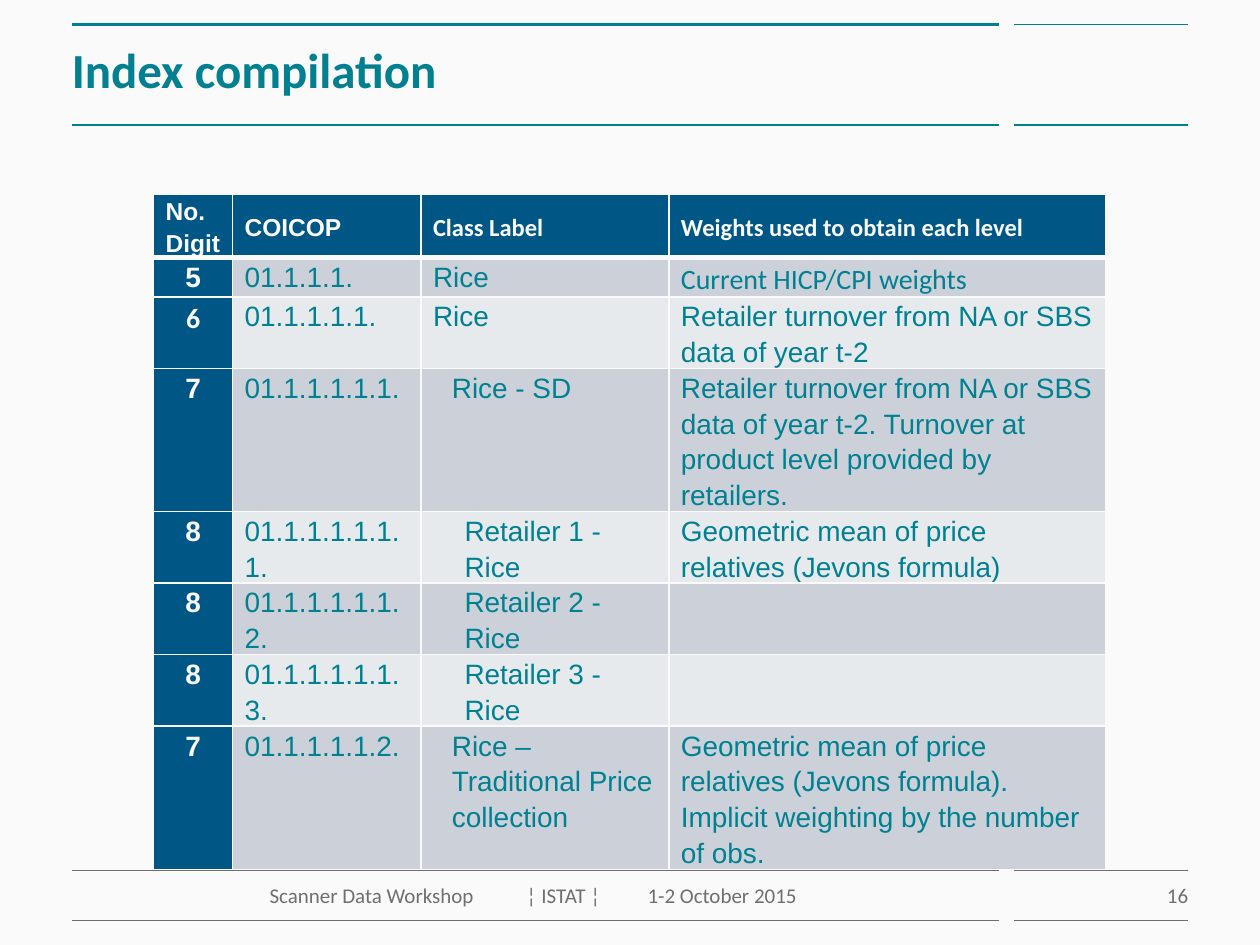
from dataclasses import dataclass

from pptx import Presentation
from pptx import util as u
from pptx.dml import color
from pptx.enum import shapes, text
from pptx.oxml import ns
from lxml import etree

COLUMNS, ROWS = 1000, 750
TEAL, GREY, NAVY, PAPER = "008091", "6F6F6F", "005786", "FAFAFA"
BANDS = ("CCD1D9", "E7EAED")
LEFT, MAIN_END, SIDE_START, RIGHT = 57, 793, 805, 943
HEADER_TOP, HEADER_END, FOOTER_TOP, FOOTER_END = 19.5, 99.3, 691, 730.3

deck = Presentation()
deck.slide_width, deck.slide_height = u.Inches(10), u.Inches(7.5)


@dataclass
class Rule:
    row: float
    ink: str
    main_width: float
    side_width: float


@dataclass
class Style:
    size: float
    ink: str
    font: str = "Calibri"
    bold: bool = False


@dataclass
class Level:
    digits: str
    coicop: str
    label: str
    weights: str
    indent: int = 0
    digit_font: str = "Arial"
    weights_font: str = "Arial"


RULES = [
    Rule(HEADER_TOP, TEAL, 1.5, 0.75),
    Rule(HEADER_END, TEAL, 1.5, 0.75),
    Rule(FOOTER_TOP, GREY, 0.75, 0.25),
    Rule(FOOTER_END, GREY, 0.75, 0.25),
]
HEADINGS = [
    ("No. Digit", "Arial"),
    ("COICOP", "Arial"),
    ("Class Label", "Calibri"),
    ("Weights used to obtain each level", "Calibri"),
]
LEVELS = [
    Level("5", "01.1.1.1.", "Rice", "Current HICP/CPI weights", weights_font="Calibri"),
    Level("6", "01.1.1.1.1.", "Rice",
          "Retailer turnover from NA or SBS data of year t-2", digit_font="Calibri"),
    Level("7", "01.1.1.1.1.1.", "Rice - SD",
          "Retailer turnover from NA or SBS data of year t-2. "
          "Turnover at product level provided by retailers.", 15),
    Level("8", "01.1.1.1.1.1.1.", "Retailer 1 - Rice",
          "Geometric mean of price relatives (Jevons formula)", 25),
    Level("8", "01.1.1.1.1.1.2.", "Retailer 2 - Rice", "", 25),
    Level("8", "01.1.1.1.1.1.3.", "Retailer 3 - Rice", "", 25),
    Level("7", "01.1.1.1.1.2.", "Rice – Traditional Price collection",
          "Geometric mean of price relatives (Jevons formula). "
          "Implicit weighting by the number of obs.", 15),
]
COLUMN_WIDTHS = (62.6, 149.6, 196.8, 347)
ROW_HEIGHTS = (24, 28, 28, 28, 31, 28, 35, 58)


def across(columns: float) -> int:
    return round(deck.slide_width * columns / COLUMNS)


def down(rows: float) -> int:
    return round(deck.slide_height * rows / ROWS)


def paint(target, ink: str) -> None:
    target.solid()
    target.fore_color.rgb = color.RGBColor.from_string(ink)


def write(frame, words: str, style: Style, align=text.PP_ALIGN.LEFT):
    frame.text = words
    para = frame.paragraphs[0]
    para.alignment = align
    for font in [para.font] + [span.font for span in para.runs]:
        font.size, font.name, font.bold = u.Pt(style.size), style.font, style.bold
        paint(font.fill, style.ink)
    return para


def draw_line(page, start: float, end: float, row: float, ink: str, width: float) -> None:
    line = page.shapes.add_connector(
        shapes.MSO_CONNECTOR.STRAIGHT, across(end), down(row), across(start), down(row))
    paint(line.line.fill, ink)
    line.line.width = u.Pt(width)
    etree.SubElement(line.element.spPr, ns.qn("a:effectLst"))


def draw_footer(page, left: int, words: str, end: int, align) -> None:
    box = page.shapes.add_textbox(across(left), down(FOOTER_TOP), across(end - left),
                                  down(FOOTER_END - FOOTER_TOP))
    frame = box.text_frame
    frame.word_wrap = True
    frame.margin_left = frame.margin_right = frame.margin_bottom = 0
    frame.margin_top = down(9.5)
    write(frame, words, Style(12, GREY), align)


def set_borders(cell, bottom: float) -> None:
    properties = cell._tc.get_or_add_tcPr()
    for side, width in (("L", 1), ("R", 1), ("T", 1), ("B", bottom)):
        border = etree.SubElement(properties, ns.qn(f"a:ln{side}"), w=str(u.Pt(width)))
        fill = etree.SubElement(border, ns.qn("a:solidFill"))
        etree.SubElement(fill, ns.qn("a:srgbClr"), val=PAPER)


def fill_cell(cell, words: str, style: Style, back: str, align=text.PP_ALIGN.LEFT,
              indent: int = 0, header: bool = False) -> None:
    set_borders(cell, 3 if header else 1)
    paint(cell.fill, back)
    cell.margin_left = cell.margin_right = across(9.5)
    cell.margin_top = cell.margin_bottom = 0
    cell.vertical_anchor = text.MSO_ANCHOR.MIDDLE if header else text.MSO_ANCHOR.TOP
    para = write(cell.text_frame, words, style, align)
    para.line_spacing = 1.15
    if indent:
        properties = para._p.get_or_add_pPr()
        properties.set("marL", str(across(indent)))
        properties.set("indent", "0")


def draw_table(page) -> None:
    holder = page.shapes.add_table(len(LEVELS) + 1, len(HEADINGS), across(122), down(154),
                                   across(sum(COLUMN_WIDTHS)), down(457))
    table = holder.table
    for column, width in zip(table.columns, COLUMN_WIDTHS):
        column.width = across(width)
    for row, height in zip(table.rows, ROW_HEIGHTS):
        row.height = down(height)
    holder.height = down(457)
    for index, (words, font) in enumerate(HEADINGS):
        fill_cell(table.cell(0, index), words, Style(14, PAPER, font, True), NAVY, header=True)
    for index, level in enumerate(LEVELS):
        digits, coicop, label, weights = table.rows[index + 1].cells
        back = BANDS[index % 2]
        body = Style(16, TEAL, "Arial")
        fill_cell(digits, level.digits, Style(16, PAPER, level.digit_font, True), NAVY,
                  text.PP_ALIGN.CENTER)
        fill_cell(coicop, level.coicop, body, back)
        fill_cell(label, level.label, body, back, indent=level.indent)
        fill_cell(weights, level.weights, Style(16, TEAL, level.weights_font), back)


def draw_title(page) -> None:
    title = page.shapes.title
    title.left, title.top = across(LEFT), down(HEADER_TOP)
    title.width, title.height = across(MAIN_END - LEFT), down(HEADER_END - HEADER_TOP)
    frame = title.text_frame
    frame.margin_left = frame.margin_right = frame.margin_top = 0
    frame.margin_bottom = down(10)
    frame.vertical_anchor = text.MSO_ANCHOR.MIDDLE
    write(frame, "Index compilation", Style(28, TEAL, bold=True))


def main() -> None:
    page = deck.slides.add_slide(deck.slide_layouts[5])
    paint(page.background.fill, PAPER)
    for rule in RULES:
        draw_line(page, LEFT, MAIN_END, rule.row, rule.ink, rule.main_width)
        draw_line(page, SIDE_START, RIGHT, rule.row, rule.ink, rule.side_width)
    draw_title(page)
    draw_table(page)
    draw_footer(page, SIDE_START, "16", RIGHT, text.PP_ALIGN.RIGHT)
    draw_footer(page, LEFT + 2, "Scanner Data Workshop\t ¦ ISTAT ¦\t1-2 October 2015 ",
                MAIN_END - 2, text.PP_ALIGN.CENTER)
    deck.save("out.pptx")


if __name__ == "__main__":
    main()
